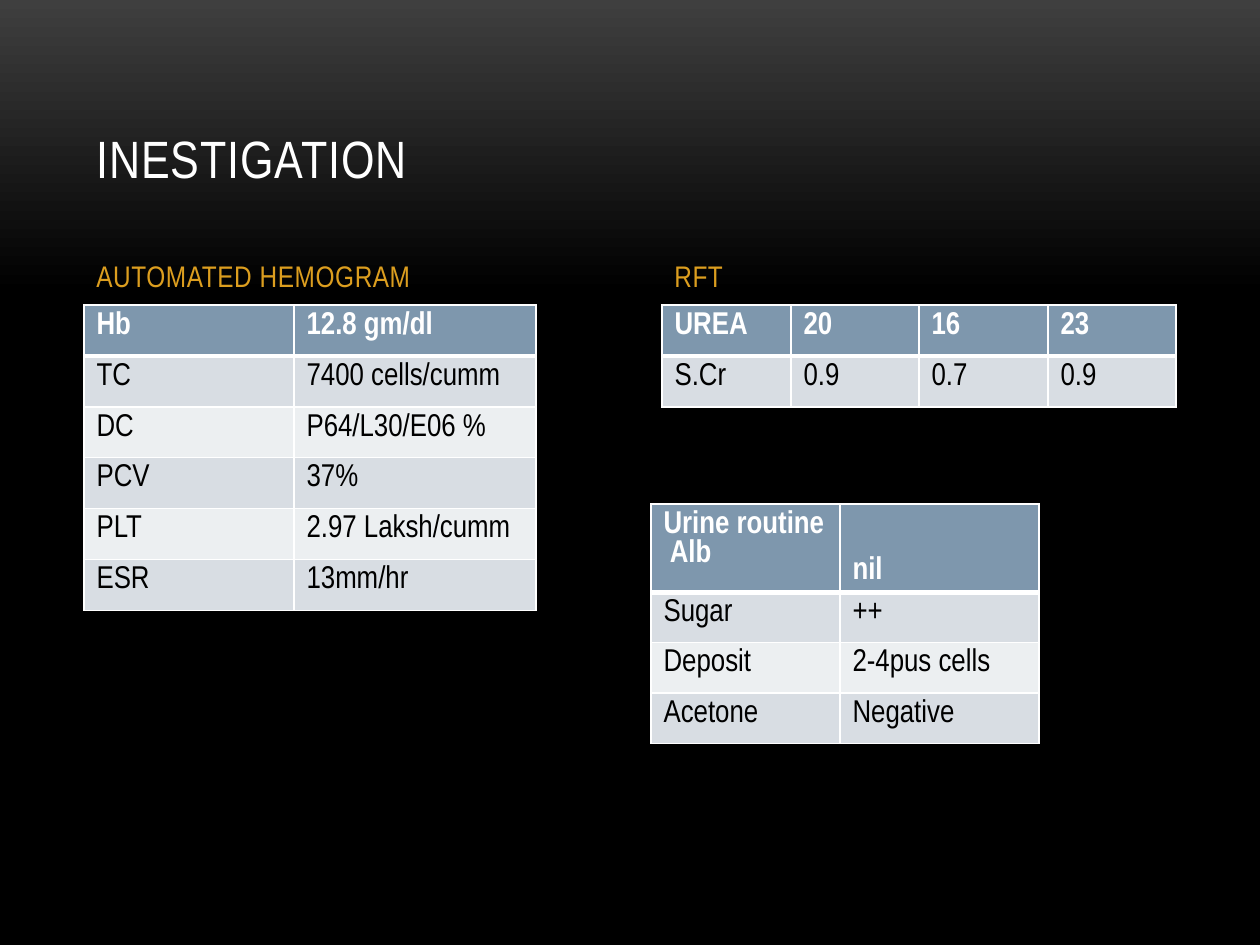
from pptx import Presentation
from pptx import util as u
from pptx.dml.color import RGBColor
from pptx.enum import text
from pptx.oxml.ns import qn
from lxml import etree

PX = 914400 // 126
FONT = "Arial Narrow"
COLORS = {
    "top": "3F3F3F", "black": "000000", "white": "FFFFFF", "gold": "DC9E1F",
    "header": "7E97AD", "odd": "D8DDE3", "even": "ECEFF1",
}


def px(value):
    return u.Emu(value * PX)


def color(name):
    return RGBColor.from_string(COLORS[name])


def write(frame, content, size=18, fill="black", bold=False, spacing=0,
          after=None, anchor=text.MSO_ANCHOR.TOP):
    """Put formatted text into a text frame; \\v is a line break."""
    frame.text = content
    frame.word_wrap = True
    frame.vertical_anchor = anchor
    paragraph = frame.paragraphs[0]
    paragraph.alignment = text.PP_ALIGN.LEFT
    if after is not None:
        paragraph.space_after = u.Pt(after)
    for run in paragraph.runs:
        run.font.name = FONT
        run.font.size = u.Pt(size)
        run.font.bold = bold
        run.font.color.rgb = color(fill)
        if spacing:
            run.font._element.set("spc", str(spacing))


def paint_background(slide):
    fill = slide.background.fill
    fill.gradient()
    fill.gradient_angle = 270
    for stop, name, position in zip(fill.gradient_stops, ("top", "black"), (0, 0.31)):
        stop.color.rgb = color(name)
        stop.position = position


def add_title(slide, content):
    title = slide.shapes.title
    title.left, title.top, title.width, title.height = map(px, (84, 38, 1092, 157))
    title.text_frame.auto_size = text.MSO_AUTO_SIZE.NONE
    write(title.text_frame, content, size=30, fill="white", spacing=50,
          anchor=text.MSO_ANCHOR.BOTTOM)


def add_heading(slide, left, content):
    box = slide.shapes.add_textbox(px(left), px(221), px(514), px(79))
    write(box.text_frame, content, size=17, fill="gold", spacing=30, after=6,
          anchor=text.MSO_ANCHOR.BOTTOM)


def set_borders(cell, top=1, bottom=1):
    """White cell borders, widths in points; lines go before the cell fill."""
    properties = cell._tc.get_or_add_tcPr()
    widths = (("a:lnL", 1), ("a:lnR", 1), ("a:lnT", top), ("a:lnB", bottom))
    for index, (tag, width) in enumerate(widths):
        line = etree.Element(qn(tag), w=str(u.Pt(width)))
        solid = etree.SubElement(line, qn("a:solidFill"))
        etree.SubElement(solid, qn("a:srgbClr"), val=COLORS["white"])
        properties.insert(index, line)


def add_results(slide, left, top, widths, heights, rows):
    """Table with a header row, banded body rows and white rules."""
    frame = slide.shapes.add_table(len(rows), len(widths), px(left), px(top),
                                   px(sum(widths)), px(sum(heights)))
    table = frame.table
    for column, width in zip(table.columns, widths):
        column.width = px(width)
    for r, (row, height) in enumerate(zip(rows, heights)):
        table.rows[r].height = px(height)
        header = r == 0
        band = "header" if header else ("even", "odd")[r % 2]
        for c, value in enumerate(row):
            cell = table.cell(r, c)
            cell.fill.solid()
            cell.fill.fore_color.rgb = color(band)
            set_borders(cell, top=3 if r == 1 else 1, bottom=3 if header else 1)
            write(cell.text_frame, value, bold=header,
                  fill="white" if header else "black")
    return table


def main():
    presentation = Presentation()
    presentation.slide_width, presentation.slide_height = u.Inches(10), u.Inches(7.5)
    slide = presentation.slides.add_slide(presentation.slide_layouts[5])
    paint_background(slide)
    add_title(slide, "INESTIGATION")

    # Blood count
    add_heading(slide, 84, "AUTOMATED HEMOGRAM")
    add_results(slide, 84, 305, (210, 242), (51, 51, 45, 51, 51, 51), [
        ("Hb", "12.8 gm/dl"),
        ("TC", "7400 cells/cumm"),
        ("DC", "P64/L30/E06 %"),
        ("PCV", "37%"),
        ("PLT", "2.97 Laksh/cumm"),
        ("ESR", "13mm/hr"),
    ])

    # Renal function
    add_heading(slide, 662, "RFT")
    add_results(slide, 662, 305, (129, 128, 129, 128), (51, 51), [
        ("UREA", "20", "16", "23"),
        ("S.Cr", "0.9", "0.7", "0.9"),
    ])

    # Urine: the header value lines up with the second header line
    urine = add_results(slide, 651, 504, (189, 199), (72, 46, 50, 50), [
        ("Urine routine\v Alb", "nil"),
        ("Sugar", "++"),
        ("Deposit", "2-4pus cells"),
        ("Acetone", "Negative"),
    ])
    urine.cell(0, 1).vertical_anchor = text.MSO_ANCHOR.BOTTOM

    presentation.save("out.pptx")


if __name__ == "__main__":
    main()
